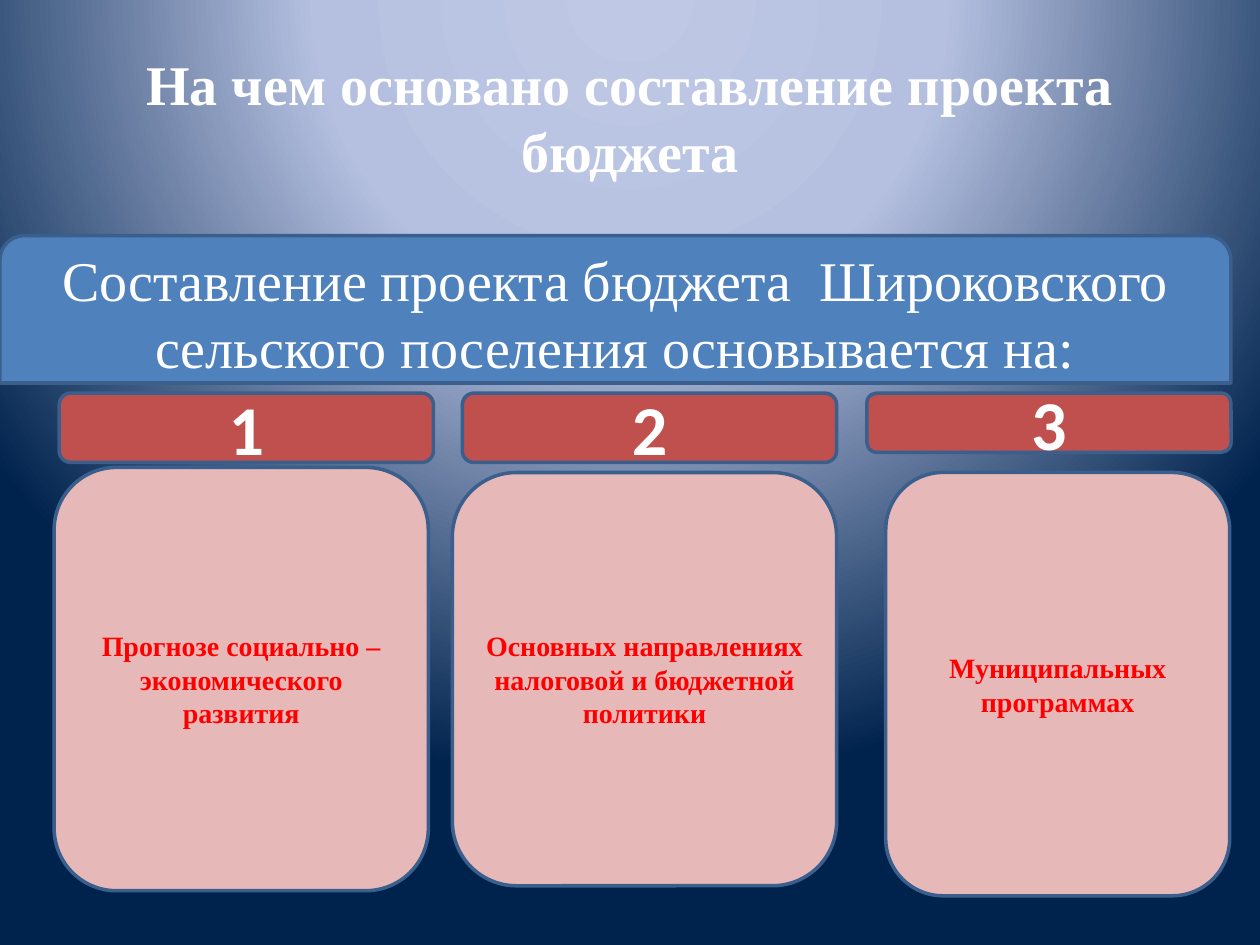
"""Build the slide on what the draft budget of the settlement is based on."""
from dataclasses import dataclass

from pptx import Presentation
from pptx.dml.color import RGBColor
from pptx.enum.shapes import MSO_SHAPE
from pptx.enum.text import MSO_ANCHOR, PP_ALIGN
from pptx.oxml import parse_xml
from pptx.oxml.ns import nsdecls, qn
from pptx.util import Inches, Pt


@dataclass(frozen=True)
class Theme:
    serif: str = "Times New Roman"
    sans: str = "Calibri"
    white: str = "FFFFFF"
    red: str = "FF0000"
    banner: str = "4F81BD"
    badge: str = "C0504D"
    card: str = "E6B9B8"
    outline: str = "3A5F8C"
    glow: tuple = ((0, "BFC9E5"), (40, "B5C0E0"), (100, "00234D"))
    heading_size: int = 32
    badge_size: int = 40
    card_size: int = 16
    outline_width: int = 2


theme = Theme()


def write(box, text, size, color, font=theme.serif, bold=True):
    frame = box.text_frame
    frame.word_wrap = True
    frame.vertical_anchor = MSO_ANCHOR.MIDDLE
    paragraph = frame.paragraphs[0]
    paragraph.alignment = PP_ALIGN.CENTER
    run = paragraph.add_run()
    run.text = text
    run.font.name = font
    run.font.size = Pt(size)
    run.font.bold = bold
    run.font.color.rgb = RGBColor.from_string(color)


def add_block(kind, bounds, fill):
    block = slide.shapes.add_shape(kind, *map(Inches, bounds))
    block.shadow.inherit = False
    block.fill.solid()
    block.fill.fore_color.rgb = RGBColor.from_string(fill)
    block.line.color.rgb = RGBColor.from_string(theme.outline)
    block.line.width = Pt(theme.outline_width)
    return block


prs = Presentation()
prs.slide_width, prs.slide_height = Inches(10), Inches(7.5)
slide = prs.slides.add_slide(prs.slide_layouts[6])

slide.background.fill.gradient()
gradient = slide.element.find(".//" + qn("a:gradFill"))
stops = "".join(
    f'<a:gs pos="{position * 1000}"><a:srgbClr val="{color}"/></a:gs>'
    for position, color in theme.glow
)
radial_glow = parse_xml(
    f'<a:gradFill {nsdecls("a")} rotWithShape="1"><a:gsLst>{stops}</a:gsLst>'
    '<a:path path="circle"><a:fillToRect l="50000" t="-80000" r="50000" b="180000"/>'
    "</a:path></a:gradFill>"
)
gradient.getparent().replace(gradient, radial_glow)

title = slide.shapes.add_textbox(Inches(0.5), Inches(0.3), Inches(9), Inches(1.25))
write(title, "На чем основано составление проекта бюджета", theme.heading_size, theme.white)

banner = add_block(MSO_SHAPE.ROUND_2_SAME_RECTANGLE, (0, 1.87, 9.77, 1.17), theme.banner)
write(
    banner,
    "Составление проекта бюджета  Широковского сельского поселения основывается на:",
    theme.heading_size,
    theme.white,
    bold=False,
)

foundations = (
    ("Прогнозе социально – экономического развития",
     (0.43, 3.71, 2.97, 3.36), (0.47, 3.12, 2.97, 0.55)),
    ("Основных направлениях налоговой и бюджетной политики",
     (3.59, 3.75, 3.05, 3.28), (3.67, 3.12, 2.97, 0.55)),
    ("Муниципальных программах",
     (7.03, 3.75, 2.73, 3.36), (6.88, 3.12, 2.89, 0.47)),
)
for number, (foundation, card_bounds, badge_bounds) in enumerate(foundations, 1):
    card = add_block(MSO_SHAPE.ROUNDED_RECTANGLE, card_bounds, theme.card)
    write(card, foundation, theme.card_size, theme.red)
    badge = add_block(MSO_SHAPE.ROUNDED_RECTANGLE, badge_bounds, theme.badge)
    write(badge, str(number), theme.badge_size, theme.white, theme.sans)

prs.save("out.pptx")
